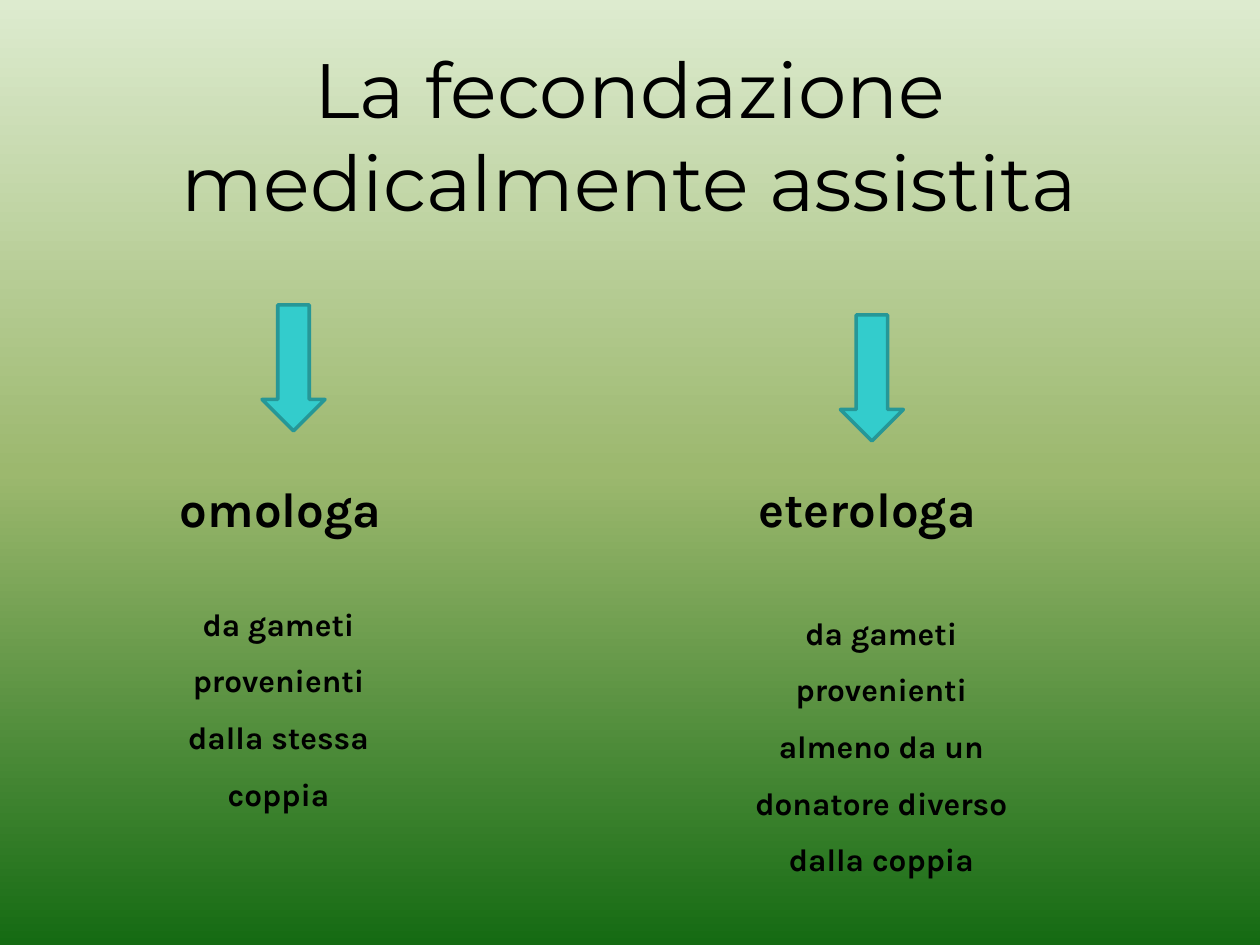
from copy import deepcopy

from pptx import Presentation
from pptx.dml.color import RGBColor
from pptx.enum.shapes import MSO_SHAPE
from pptx.enum.text import MSO_ANCHOR, MSO_AUTO_SIZE, PP_ALIGN
from pptx.oxml.ns import qn
from pptx.util import Inches, Pt

BLACK = RGBColor(0, 0, 0)
TEAL = RGBColor(0x33, 0xCC, 0xCC)
EDGE = RGBColor(0x26, 0x97, 0x97)
PALE = RGBColor(0xDD, 0xEB, 0xCF)
OLIVE = RGBColor(0x9C, 0xB8, 0x6E)
GREEN = RGBColor(0x15, 0x6B, 0x13)


def style(para, font, size, bold):
    for run in para.runs:
        run.font.name = font
        run.font.size = Pt(size)
        run.font.bold = bold
        run.font.color.rgb = BLACK


def add_text(slide, box, text, size, wrap=True):
    """Add a bold text box and return its paragraph."""
    shape = slide.shapes.add_textbox(*map(Inches, box))
    frame = shape.text_frame
    frame.word_wrap = wrap
    frame.auto_size = MSO_AUTO_SIZE.SHAPE_TO_FIT_TEXT
    frame.text = text
    para = frame.paragraphs[0]
    style(para, "Karla", size, True)
    return para


prs = Presentation()
prs.slide_width = Inches(10)
prs.slide_height = Inches(7.5)
slide = prs.slides.add_slide(prs.slide_layouts[5])

# Background: three stops from top to bottom
fill = slide.background.fill
fill.gradient()
fill.gradient_angle = 270
stops = slide.element.find(".//" + qn("a:gsLst"))
stops.insert(1, deepcopy(stops[0]))
for stop, place, color in zip(fill.gradient_stops, (0, 0.5, 1), (PALE, OLIVE, GREEN)):
    stop.position = place
    stop.color.rgb = color

title = slide.shapes.title
title.left, title.top = Inches(0.5), Inches(0.3)
title.width, title.height = Inches(9), Inches(1.53)
frame = title.text_frame
frame.vertical_anchor = MSO_ANCHOR.MIDDLE
para = frame.paragraphs[0]
para.text = "La fecondazione\nmedicalmente assistita"
para.alignment = PP_ALIGN.CENTER
style(para, "Montserrat", 44, False)

# Each kind: arrow corner, name, name box, wrap, detail, detail box
kinds = [
    ((2.08, 2.42), "omologa", (1.33, 3.75, 2.02, 0.57), False,
     "da gameti provenienti dalla stessa coppia", (1.17, 4.6, 2.08, 1.86)),
    ((6.67, 2.5), "eterologa", (5.92, 3.75, 2.58, 0.57), True,
     "da gameti provenienti almeno da un donatore diverso dalla coppia",
     (5.83, 4.67, 2.33, 2.31)),
]
for (left, top), name, head, wrap, detail, body in kinds:
    arrow = slide.shapes.add_shape(
        MSO_SHAPE.DOWN_ARROW, Inches(left), Inches(top), Inches(0.5), Inches(1))
    arrow.shadow.inherit = False
    arrow.fill.solid()
    arrow.fill.fore_color.rgb = TEAL
    arrow.line.color.rgb = EDGE
    arrow.line.width = Pt(2)

    add_text(slide, head, name, 28, wrap)
    para = add_text(slide, body, detail, 18)
    para.alignment = PP_ALIGN.CENTER
    para.line_spacing = 1.5

prs.save("out.pptx")
